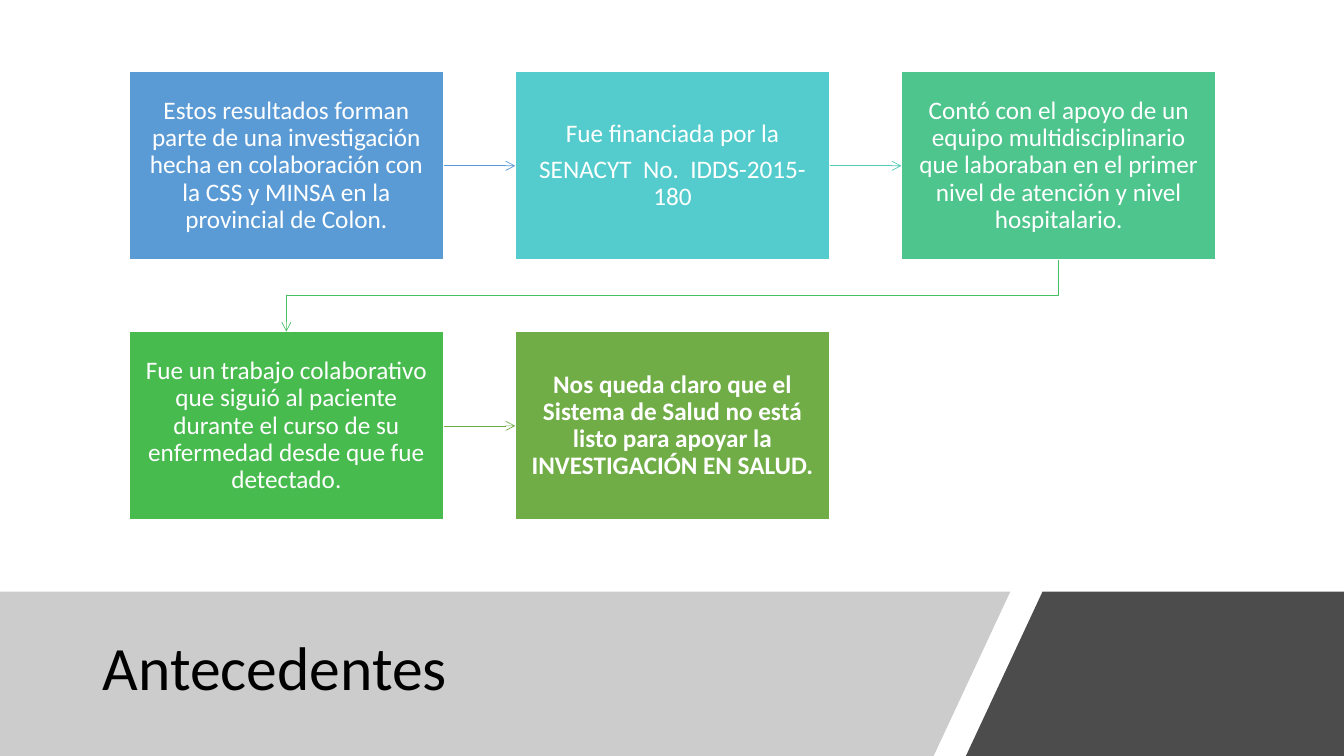
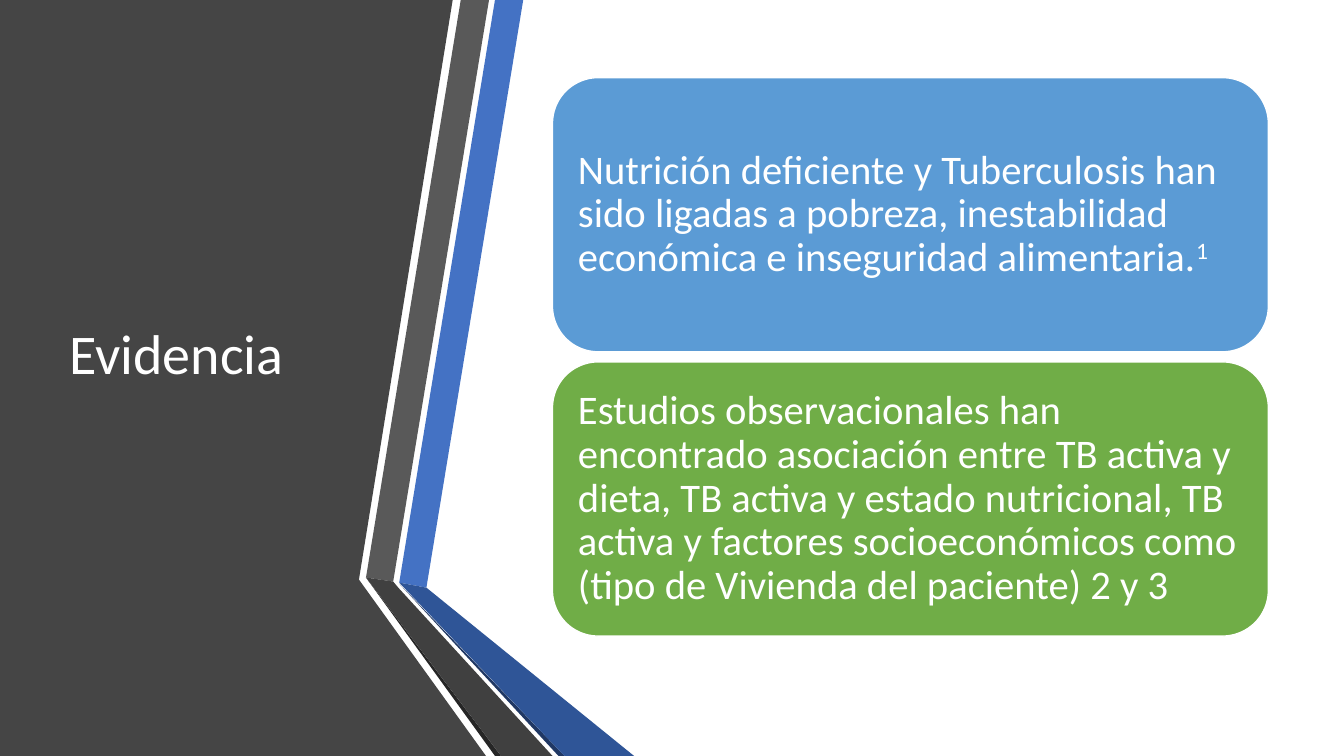
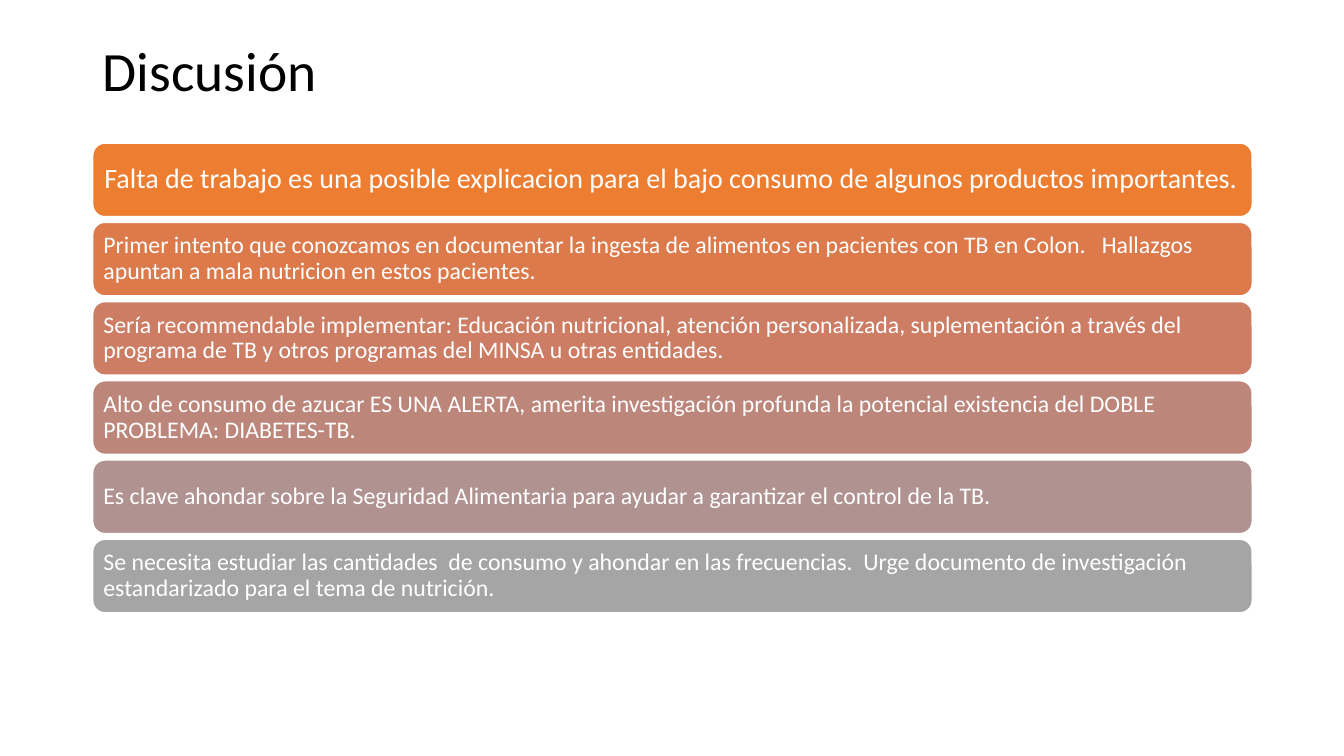
from dataclasses import dataclass

from lxml import etree
from pptx import Presentation
from pptx.dml.color import RGBColor
from pptx.enum.shapes import MSO_CONNECTOR, MSO_SHAPE
from pptx.enum.text import MSO_ANCHOR, PP_ALIGN
from pptx.oxml.ns import qn
from pptx.util import Inches, Pt

RECT, ROUNDED = MSO_SHAPE.RECTANGLE, MSO_SHAPE.ROUNDED_RECTANGLE
STRAIGHT, ELBOW = MSO_CONNECTOR.STRAIGHT, MSO_CONNECTOR.ELBOW
LEFT, CENTER = PP_ALIGN.LEFT, PP_ALIGN.CENTER
MIDDLE = MSO_ANCHOR.MIDDLE
TOP_SIDE, LEFT_SIDE, BOTTOM_SIDE, RIGHT_SIDE = range(4)

FONT = "Calibri"
WHITE, BLACK = "FFFFFF", "000000"
BLUE, GREEN = "5B9BD5", "70AD47"


@dataclass
class Card:
    fill: str
    paragraphs: list[str]
    size: float = 18
    bold: bool = False
    superscript: str = ""
    inset: float = 0.07


@dataclass
class Panel:
    fill: str
    points: list[tuple[float, float]]
    opacity: int = 100


# Slide 1: steps of the flow, and the colours of the arrows between them
STEPS = [
    Card(BLUE, ["Estos resultados forman parte de una investigación hecha en "
                "colaboración con la CSS y MINSA en la provincial de Colon."]),
    Card("54CCCD", ["Fue financiada por la", "SENACYT  No.  IDDS-2015-180"]),
    Card("4DC58D", ["Contó con el apoyo de un equipo multidisciplinario que "
                    "laboraban en el primer nivel de atención y nivel hospitalario."]),
    Card("48BB4F", ["Fue un trabajo colaborativo que siguió al paciente durante "
                    "el curso de su enfermedad desde que fue detectado."]),
    Card(GREEN, ["Nos queda claro que el Sistema de Salud no está listo para "
                 "apoyar la INVESTIGACIÓN EN SALUD."], bold=True),
]
STEP_ARROWS = [BLUE, "52CAB8", "49BF64", GREEN]
STEPS_PER_ROW = 3

TITLE_BAND = [
    Panel("808080", [(0, 5.87), (10.02, 5.87), (9.26, 7.5), (0, 7.5)], 40),
    Panel(BLACK, [(10.34, 5.87), (13.33, 5.87), (13.33, 7.5), (9.58, 7.5)], 70),
]

# Slide 2: folded ribbons beside the title, and the findings
RIBBONS = [
    Panel("454545", [(0, 0), (4.49, 0), (3.56, 5.75), (4.82, 7.5), (0, 7.5)]),
    Panel("4472C4", [(3.96, 5.78), (4.23, 5.83), (5.19, 0), (4.91, 0)]),
    Panel("595959", [(4.85, 0), (4.57, 0), (3.63, 5.73), (3.9, 5.77)]),
    Panel("262626", [(3.63, 5.73), (4.91, 7.5), (4.97, 7.5)]),
    Panel("203864", [(3.96, 5.79), (5.54, 7.5), (5.6, 7.5)]),
    Panel("2F5597", [(3.96, 5.78), (5.6, 7.5), (6.29, 7.5), (4.23, 5.83)]),
    Panel("404040", [(5.48, 7.5), (3.95, 5.83), (3.9, 5.77), (3.63, 5.73), (4.97, 7.5)]),
]
FINDINGS = [
    Card(BLUE, ["Nutrición deficiente y Tuberculosis han sido ligadas a pobreza, "
                "inestabilidad económica e inseguridad alimentaria."],
         29, superscript="1", inset=0.12),
    Card(GREEN, ["Estudios observacionales han encontrado asociación entre TB activa y  "
                 "dieta, TB activa y estado nutricional, TB activa y factores "
                 "socioeconómicos como (tipo de Vivienda del paciente) 2 y 3"],
         29, inset=0.12),
]

# Slide 3: points of the discussion
CONCLUSIONS = [
    Card("ED7D31", ["Falta de trabajo es una posible explicacion para el bajo consumo "
                    "de algunos productos importantes."], 20, inset=0.08),
    Card("DC7A4B", ["Primer intento que conozcamos en documentar la ingesta de alimentos "
                    "en pacientes con TB en Colon.   Hallazgos apuntan a mala nutricion "
                    "en estos pacientes."], 17),
    Card("CC7D64", ["Sería recommendable implementar: Educación nutricional, atención "
                    "personalizada, suplementación a través del programa de TB y otros "
                    "programas del MINSA u otras entidades."], 17),
    Card("BD867B", ["Alto de consumo de azucar ES UNA ALERTA, amerita investigación "
                    "profunda la potencial existencia del DOBLE PROBLEMA: DIABETES-TB."], 17),
    Card("B09391", ["Es clave ahondar sobre la Seguridad Alimentaria para ayudar a "
                    "garantizar el control de la TB."], 17),
    Card("A5A5A5", ["Se necesita estudiar las cantidades  de consumo y ahondar en las "
                    "frecuencias.  Urge documento de investigación estandarizado para "
                    "el tema de nutrición."], 17),
]


def rgb(color: str) -> RGBColor:
    return RGBColor.from_string(color)


def write(shape, paragraphs: list[str], *, size: float, color: str = WHITE,
          bold: bool = False, align=LEFT, superscript: str = "",
          inset: tuple[float, float] = (0.1, 0.05), after: float = 0) -> None:
    """Fill a shape with text; the superscript follows the last paragraph."""
    frame = shape.text_frame
    frame.word_wrap = True
    frame.vertical_anchor = MIDDLE
    frame.margin_left = frame.margin_right = Inches(inset[0])
    frame.margin_top = frame.margin_bottom = Inches(inset[1])
    for index, text in enumerate(paragraphs):
        paragraph = frame.paragraphs[0] if index == 0 else frame.add_paragraph()
        paragraph.alignment = align
        paragraph.line_spacing = 0.9
        paragraph.space_after = Pt(after)
        paragraph.add_run().text = text
    if superscript:
        note = paragraph.add_run()
        note.text = superscript
        note.font._element.set("baseline", "30000")
    for paragraph in frame.paragraphs:
        for run in paragraph.runs:
            run.font.name = FONT
            run.font.size = Pt(size)
            run.font.bold = bold
            run.font.color.rgb = rgb(color)


def add_title(slide, text: str, left: float, top: float, width: float, height: float,
              *, size: float, color: str = BLACK) -> None:
    title = slide.shapes.add_textbox(Inches(left), Inches(top), Inches(width), Inches(height))
    write(title, [text], size=size, color=color)


def add_card(slide, card: Card, kind, left: float, top: float, width: float, height: float,
             *, align=LEFT, inset: tuple[float, float] | None = None):
    shape = slide.shapes.add_shape(kind, Inches(left), Inches(top), Inches(width), Inches(height))
    shape.shadow.inherit = False
    shape.fill.solid()
    shape.fill.fore_color.rgb = rgb(card.fill)
    shape.line.color.rgb = rgb(WHITE)
    shape.line.width = Pt(1)
    write(shape, card.paragraphs, size=card.size, bold=card.bold, align=align,
          superscript=card.superscript, inset=inset or (card.inset, card.inset),
          after=round(card.size * 0.35, 1))
    return shape


def add_panel(slide, panel: Panel) -> None:
    start, *rest = [(Inches(x), Inches(y)) for x, y in panel.points]
    builder = slide.shapes.build_freeform(*start)
    builder.add_line_segments(rest, close=True)
    shape = builder.convert_to_shape()
    shape.shadow.inherit = False
    shape.line.fill.background()
    shape.fill.solid()
    shape.fill.fore_color.rgb = rgb(panel.fill)
    if panel.opacity < 100:
        color = shape._element.spPr.find(qn("a:solidFill")).find(qn("a:srgbClr"))
        etree.SubElement(color, qn("a:alpha")).set("val", str(panel.opacity * 1000))


def add_arrow(slide, source, target, color: str) -> None:
    """Join two steps: straight within a row, bent down to the next row."""
    same_row = source.top == target.top
    arrow = slide.shapes.add_connector(STRAIGHT if same_row else ELBOW, 0, 0, 0, 0)
    arrow.begin_connect(source, RIGHT_SIDE if same_row else BOTTOM_SIDE)
    arrow.end_connect(target, LEFT_SIDE if same_row else TOP_SIDE)
    properties = arrow._element.spPr
    if not same_row:
        # A quarter turn makes the bent line leave and arrive vertically
        across, down = arrow.width, arrow.height
        arrow.left += (across - down) // 2
        arrow.top += (down - across) // 2
        arrow.width, arrow.height = down, across
        frame = properties.find(qn("a:xfrm"))
        frame.attrib.pop("flipH", None)
        frame.set("rot", "5400000")
    arrow.line.color.rgb = rgb(color)
    arrow.line.width = Pt(0.5)
    etree.SubElement(properties.find(qn("a:ln")), qn("a:tailEnd")).set("type", "arrow")
    etree.SubElement(properties, qn("a:effectLst"))


def build_background(slide) -> None:
    for panel in TITLE_BAND:
        add_panel(slide, panel)
    add_title(slide, "Antecedentes", 0.92, 6.05, 8.44, 1.2, size=44)
    boxes = []
    for index, step in enumerate(STEPS):
        row, column = divmod(index, STEPS_PER_ROW)
        boxes.append(add_card(slide, step, RECT, 1.28 + column * 3.83, 0.71 + row * 2.58,
                              3.12, 1.87, align=CENTER, inset=(0.15, 0.16)))
    for source, target, color in zip(boxes, boxes[1:], STEP_ARROWS):
        add_arrow(slide, source, target, color)


def build_evidence(slide) -> None:
    for ribbon in RIBBONS:
        add_panel(slide, ribbon)
    add_title(slide, "Evidencia", 0.59, 0.75, 3.04, 5.58, size=40, color=WHITE)
    for index, finding in enumerate(FINDINGS):
        add_card(slide, finding, ROUNDED, 5.48, 0.77 + index * 2.82, 7.1, 2.72)


def build_discussion(slide) -> None:
    add_title(slide, "Discusión", 0.92, 0.4, 11.5, 0.66, size=39.6)
    first_top, last_top = 1.42, 5.35
    pitch = (last_top - first_top) / (len(CONCLUSIONS) - 1)
    for index, conclusion in enumerate(CONCLUSIONS):
        add_card(slide, conclusion, ROUNDED, 0.92, first_top + index * pitch, 11.5, 0.73)


def main() -> None:
    deck = Presentation()
    deck.slide_width, deck.slide_height = Inches(13.33), Inches(7.5)
    blank = deck.slide_layouts[6]
    for build in (build_background, build_evidence, build_discussion):
        build(deck.slides.add_slide(blank))
    deck.save("out.pptx")


if __name__ == "__main__":
    main()
